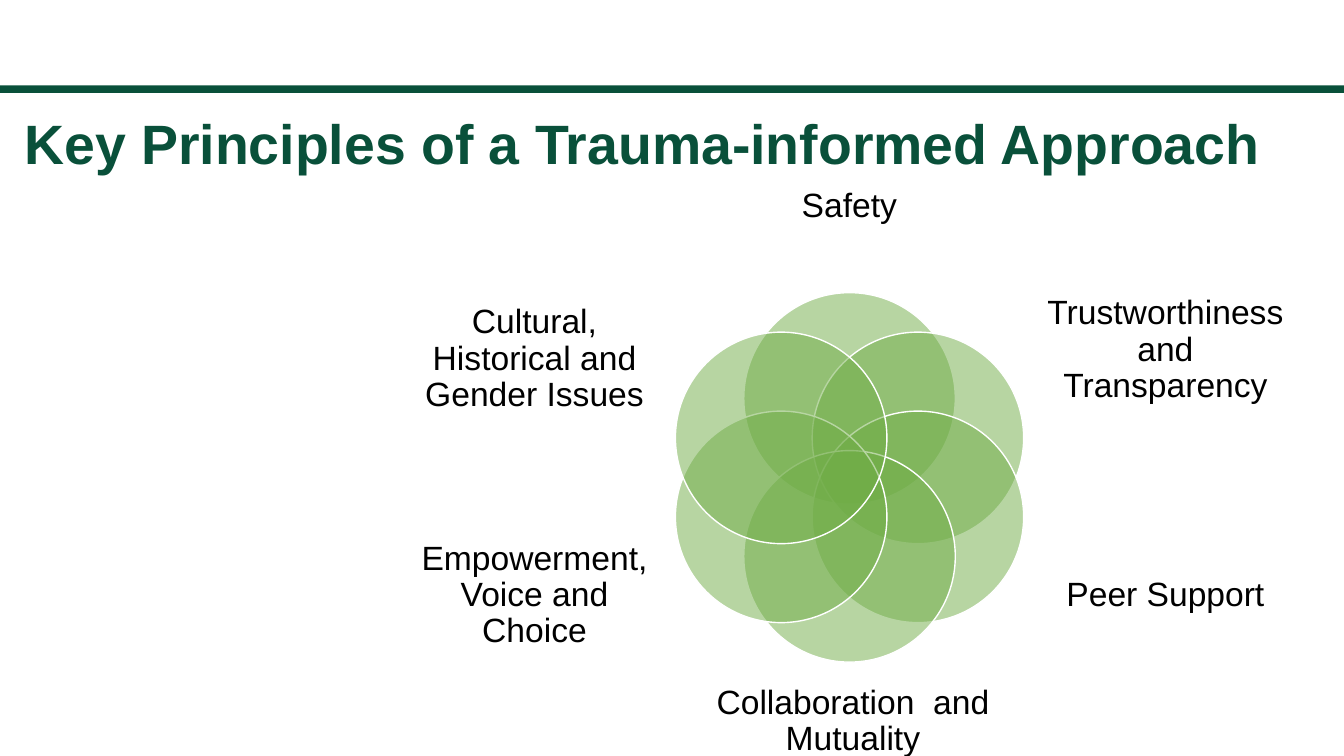
"""Build the slide on the key principles of a trauma-informed approach."""
from dataclasses import dataclass
from math import cos, radians, sin

from lxml.etree import SubElement
from pptx import Presentation
from pptx.dml.color import RGBColor as RGB
from pptx.enum.shapes import MSO_SHAPE as SHAPE
from pptx.enum.text import MSO_ANCHOR as ANCHOR, PP_ALIGN as ALIGN
from pptx.oxml.ns import qn
from pptx.util import Cm, Pt


@dataclass(frozen=True)
class Theme:
    font: str = "Arial"
    brand: RGB = RGB.from_string("09503A")
    petal: RGB = RGB.from_string("70AD47")
    outline: RGB = RGB.from_string("FFFFFF")
    text: RGB = RGB.from_string("000000")
    title_size: float = 39.6
    label_size: float = 24
    petal_alpha: int = 50


class SlideBuilder:
    def __init__(self, slide, theme):
        self.s = slide
        self.theme = theme

    def set_text(self, sp, text, size, color, bold, align, anchor, insets):
        tf = sp.text_frame
        tf.word_wrap = True
        tf.vertical_anchor = anchor
        tf.margin_left = tf.margin_right = Cm(insets[0])
        tf.margin_top = tf.margin_bottom = Cm(insets[1])
        p = tf.paragraphs[0]
        p.text = text
        p.alignment = align
        p.line_spacing = 0.9
        p.font.name = self.theme.font
        p.font.size = Pt(size)
        p.font.bold = bold
        p.font.color.rgb = color

    def title(self, text, box):
        sp = self.s.shapes.title
        sp.left, sp.top, sp.width, sp.height = map(Cm, box)
        t = self.theme
        self.set_text(sp, text, t.title_size, t.brand, True, ALIGN.LEFT, ANCHOR.TOP, (0.1, 0.05))

    def label(self, text, box):
        sp = self.s.shapes.add_textbox(*map(Cm, box))
        t = self.theme
        self.set_text(sp, text, t.label_size, t.text, False, ALIGN.CENTER, ANCHOR.MIDDLE, (0, 0))

    def shape(self, kind, box, color):
        sp = self.s.shapes.add_shape(kind, *map(Cm, box))
        sp.shadow.inherit = False
        sp.fill.solid()
        sp.fill.fore_color.rgb = color
        return sp

    def bar(self, box):
        self.shape(SHAPE.RECTANGLE, box, self.theme.brand).line.fill.background()

    def petal(self, cx, cy, size):
        box = (cx - size / 2, cy - size / 2, size, size)
        sp = self.shape(SHAPE.OVAL, box, self.theme.petal)
        sp.line.color.rgb = self.theme.outline
        sp.line.width = Pt(1)
        color = sp.element.spPr.find(qn("a:solidFill"))[0]
        SubElement(color, qn("a:alpha")).set("val", str(self.theme.petal_alpha * 1000))


CENTER_X, CENTER_Y = 21.41, 12.03
ORBIT, PETAL_SIZE = 1.99, 5.33
LEFT, RIGHT, SIDE_WIDTH = 10.31, 26.21, 6.32
UPPER, LOWER, SIDE_HEIGHT = 6.83, 12.78, 4.45

PRINCIPLES = [
    ("Safety", (18.08, 3.38, 6.65, 3.63)),
    ("Trustworthiness and Transparency", (RIGHT, UPPER, SIDE_WIDTH, 3.99)),
    ("Peer Support", (RIGHT, LOWER, SIDE_WIDTH, SIDE_HEIGHT)),
    ("Collaboration  and Mutuality", (17.75, 16.36, 7.49, 3.63)),
    ("Empowerment, Voice and Choice", (LEFT, LOWER, SIDE_WIDTH, SIDE_HEIGHT)),
    ("Cultural, Historical and Gender Issues", (LEFT, UPPER, SIDE_WIDTH, SIDE_HEIGHT)),
]


def main():
    prs = Presentation()
    prs.slide_width, prs.slide_height = Cm(33.87), Cm(19.05)
    slide = SlideBuilder(prs.slides.add_slide(prs.slide_layouts[5]), Theme())
    slide.bar((-0.08, 2.15, 33.95, 0.19))
    slide.title("Key Principles of a Trauma-informed Approach", (0.51, 2.9, 32.51, 2.9))
    step = 360 / len(PRINCIPLES)
    for i, (text, box) in enumerate(PRINCIPLES):
        angle = radians(i * step)
        slide.petal(CENTER_X + ORBIT * sin(angle), CENTER_Y - ORBIT * cos(angle), PETAL_SIZE)
        slide.label(text, box)
    prs.save("out.pptx")


if __name__ == "__main__":
    main()
